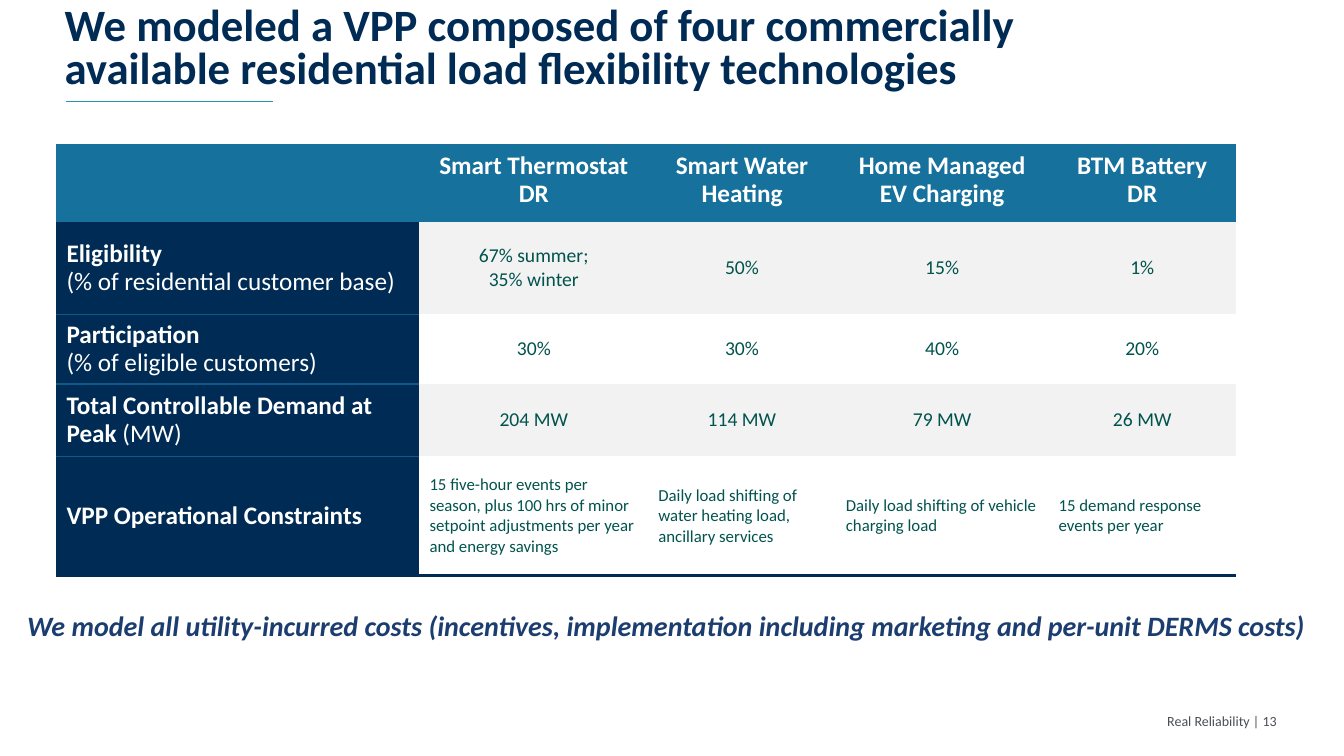
from lxml import etree
from pptx import Presentation
from pptx.dml.color import RGBColor
from pptx.enum import shapes, text
from pptx.oxml import ns
from pptx.util import Inches, Pt

TITLE = ("We modeled a VPP composed of four commercially available "
         "residential load flexibility technologies")
TECHNOLOGIES = ["Smart Thermostat DR", "Smart Water Heating",
                "Home Managed EV Charging", "BTM Battery\nDR"]
# Each measure: bold label, regular-weight unit, values by technology
MEASURES = [
    ("Eligibility\n", "(% of residential customer base)",
     ["67% summer;\n35% winter", "50%", "15%", "1%"]),
    ("Participation\n", "(% of eligible customers)",
     ["30%", "30%", "40%", "20%"]),
    ("Total Controllable Demand at Peak ", "(MW)",
     ["204 MW", "114 MW", "79 MW", "26 MW"]),
    ("VPP Operational Constraints", "",
     ["15 five-hour events per season, plus 100 hrs of minor setpoint "
      "adjustments per year and energy savings",
      "Daily load shifting of water heating load, ancillary services",
      "Daily load shifting of vehicle charging load",
      "15 demand response events per year"]),
]
COST_NOTE = ("We model all utility-incurred costs (incentives, implementation "
             "including marketing and per-unit DERMS costs)")
FOOTER = "Real Reliability | 13"

COLUMN_WIDTHS = [3.6, 2.27, 1.86, 2.11, 1.86]
ROW_HEIGHTS = [0.77, 0.92, 0.69, 0.72, 1.18]
NAVY, BLUE, GREEN, WHITE = "002B54", "16719D", "01534D", "FFFFFF"
BAND, DIVIDER, RULE = "F2F2F2", "105888", "2297AA"
NOTE_BLUE, FOOTER_GRAY = "1B3D6F", "494F56"
NO_STYLE_NO_GRID = "{2D5ABB26-0587-4C30-8999-92F81FD0307C}"
LEFT, CENTER, RIGHT = (text.PP_ALIGN.LEFT, text.PP_ALIGN.CENTER,
                       text.PP_ALIGN.RIGHT)
MIDDLE = text.MSO_ANCHOR.MIDDLE


def rgb(hex_color):
    return RGBColor.from_string(hex_color)


def style(frame, size, color, bold=False, italic=False, align=LEFT, spacing=1.0):
    for paragraph in frame.paragraphs:
        paragraph.alignment = align
        paragraph.line_spacing = spacing
        for run in paragraph.runs:
            run.font.name = "Calibri"
            run.font.size = Pt(size)
            run.font.bold = bold
            run.font.italic = italic
            run.font.color.rgb = rgb(color)


def add_text(slide, box, words, anchor, **look):
    frame = slide.shapes.add_textbox(*map(Inches, box)).text_frame
    frame.word_wrap = True
    frame.vertical_anchor = anchor
    frame.text = words
    style(frame, **look)
    return frame


def fill_cell(cell, words, fill, **look):
    cell.text_frame.text = words
    cell.vertical_anchor = MIDDLE
    cell.fill.solid()
    cell.fill.fore_color.rgb = rgb(fill)
    style(cell.text_frame, **look)


def add_bottom_border(cell, color, points):
    line = etree.Element(ns.qn("a:lnB"), w=str(Pt(points)))
    solid = etree.SubElement(line, ns.qn("a:solidFill"))
    etree.SubElement(solid, ns.qn("a:srgbClr"), val=color)
    cell._tc.get_or_add_tcPr().insert(0, line)


def add_measures_table(slide):
    table = slide.shapes.add_table(
        len(ROW_HEIGHTS), len(COLUMN_WIDTHS), Inches(0.56), Inches(1.43),
        Inches(sum(COLUMN_WIDTHS)), Inches(sum(ROW_HEIGHTS))).table
    table.first_row = table.horz_banding = False
    table._tbl.tblPr.find(ns.qn("a:tableStyleId")).text = NO_STYLE_NO_GRID
    for column, width in zip(table.columns, COLUMN_WIDTHS):
        column.width = Inches(width)
    for row, height in zip(table.rows, ROW_HEIGHTS):
        row.height = Inches(height)

    for col, technology in enumerate(["", *TECHNOLOGIES]):
        header = table.cell(0, col)
        fill_cell(header, technology, BLUE, size=18, color=WHITE, bold=True,
                  align=CENTER, spacing=0.9)
        header.margin_bottom = Inches(0.1)

    for row, (label, unit, values) in enumerate(MEASURES, start=1):
        last = row == len(MEASURES)
        heading = table.cell(row, 0)
        fill_cell(heading, label + unit, NAVY, size=18, color=WHITE, bold=True,
                  spacing=0.9)
        if unit:
            paragraph = heading.text_frame.paragraphs[-1]
            unit_run = paragraph.runs[0]
            if unit_run.text != unit:
                unit_run.text = label
                unit_run = paragraph.add_run()
                unit_run.text = unit
                style(heading.text_frame, 18, WHITE, bold=True, spacing=0.9)
            unit_run.font.bold = False
        for col, value in enumerate(values, start=1):
            fill_cell(table.cell(row, col), value, BAND if row % 2 else WHITE,
                      size=12 if last else 14, color=GREEN,
                      align=LEFT if last else CENTER)
        if last:
            for col in range(len(COLUMN_WIDTHS)):
                add_bottom_border(table.cell(row, col), NAVY, 2.25)
        else:
            add_bottom_border(heading, DIVIDER, 1)


def main():
    deck = Presentation()
    deck.slide_width, deck.slide_height = Inches(13.33), Inches(7.5)
    slide = deck.slides.add_slide(deck.slide_layouts[6])

    rule = slide.shapes.add_connector(
        shapes.MSO_CONNECTOR.STRAIGHT, Inches(0.65), Inches(1.01),
        Inches(2.71), Inches(1.01))
    rule.line.color.rgb = rgb(RULE)
    rule.line.width = Pt(1)
    etree.SubElement(rule._element.spPr, ns.qn("a:effectLst"))

    add_text(slide, (10.67, 6.95, 2.09, 0.4), FOOTER, MIDDLE,
             size=10, color=FOOTER_GRAY, align=RIGHT)
    title = add_text(slide, (0.56, 0.41, 11.19, 0.61), TITLE,
                     text.MSO_ANCHOR.BOTTOM, size=32, color=NAVY, bold=True,
                     spacing=0.8)
    title.margin_left, title.margin_bottom = Inches(0.08), Inches(0.1)
    add_measures_table(slide)
    add_text(slide, (0.17, 5.99, 12.88, 0.44), COST_NOTE,
             text.MSO_ANCHOR.TOP, size=20, color=NOTE_BLUE, bold=True,
             italic=True)
    deck.save("out.pptx")


if __name__ == "__main__":
    main()
